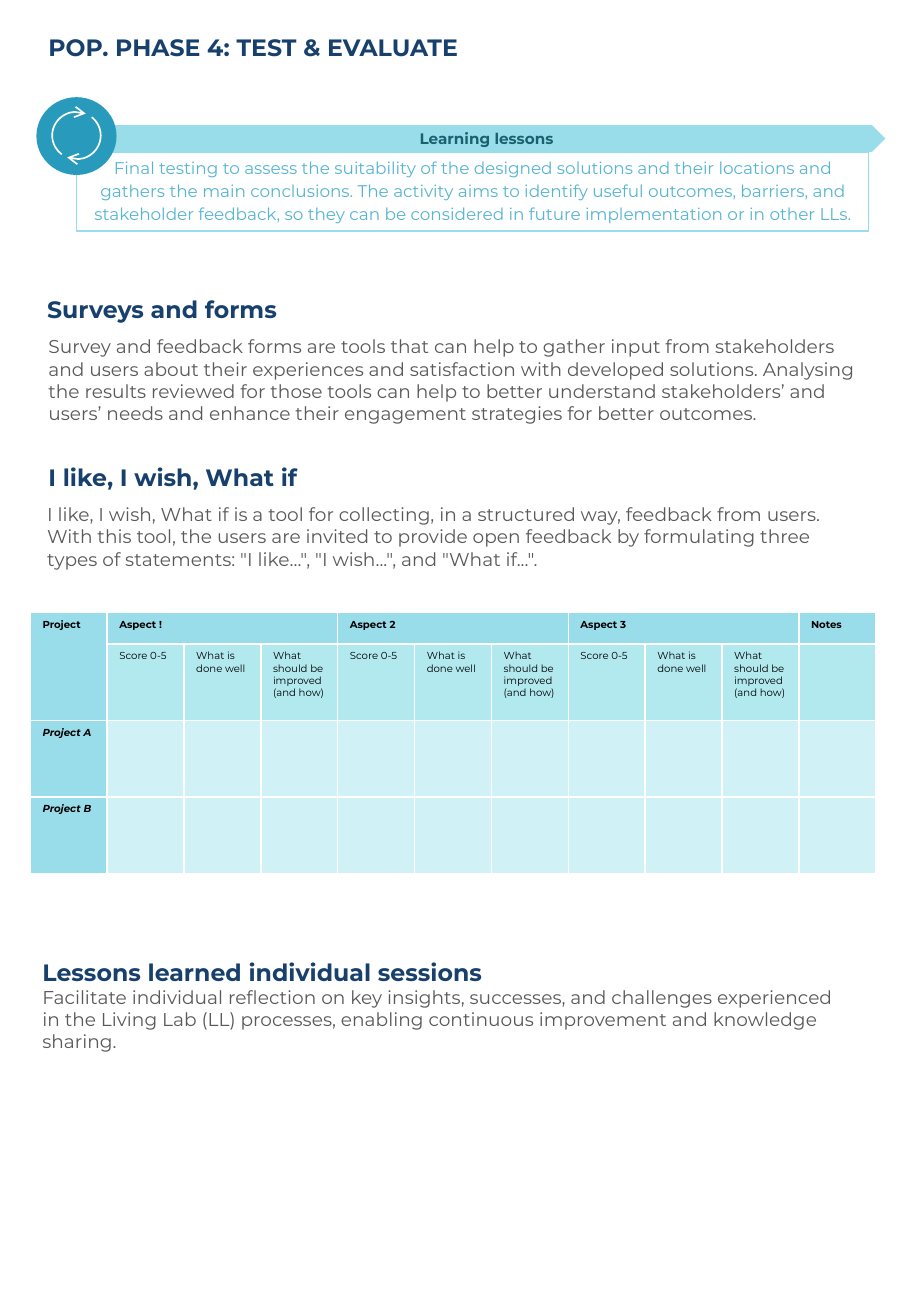
from lxml.etree import SubElement
from pptx import Presentation
from pptx.dml.color import RGBColor
from pptx.enum.shapes import MSO_SHAPE as Shape
from pptx.enum.text import MSO_ANCHOR as Anchor, MSO_AUTO_SIZE as AutoSize, PP_ALIGN as Align
from pptx.oxml.ns import qn
from pptx.util import Inches, Pt

COLOURS = {
    "navy": "17406D", "grey": "595959", "aqua": "99DDEB", "teal": "19616F",
    "sky": "56B5D1", "disc": "289BBC", "cell": "3EC8D9",
    "white": "FFFFFF", "black": "000000",
}
RGB = {name: RGBColor.from_string(code) for name, code in COLOURS.items()}
GRID = Inches(0.01)  # the page is a grid of 750 columns by 1083 rows

deck = Presentation()
deck.slide_width, deck.slide_height = 750 * GRID, 1083 * GRID
slide = deck.slides.add_slide(deck.slide_layouts[6])


def style(paragraph, size, colour, bold=False, italic=False):
    for run in paragraph.runs:
        run.font.name = "Montserrat"
        run.font.size = Pt(size)
        run.font.bold, run.font.italic = bold, italic
        run.font.color.rgb = RGB[colour]


def add_block(kind, box, fill=None, line=None):
    """Add a flat preset shape; box is left, top, width, height in grid units."""
    block = slide.shapes.add_shape(kind, *[side * GRID for side in box])
    block.shadow.inherit = False
    for part, colour in ((block.fill, fill), (block.line.fill, line)):
        if colour:
            part.solid()
            part.fore_color.rgb = RGB[colour]
        else:
            part.background()
    if line:
        block.line.width = Pt(1)
    return block


# Phase banner
banner = add_block(Shape.CHEVRON, (72, 103, 657, 22), fill="aqua")
banner.text_frame.text = "Learning lessons"
banner.text_frame.vertical_anchor = Anchor.MIDDLE
banner.text_frame.paragraphs[0].alignment = Align.CENTER
style(banner.text_frame.paragraphs[0], 9, "teal", bold=True)

summary = add_block(Shape.RECTANGLE, (63, 125, 652, 65), fill="white", line="aqua")
frame = summary.text_frame
frame.word_wrap = True
frame.vertical_anchor = Anchor.TOP
frame.margin_left = frame.margin_right = 6 * GRID
frame.margin_top, frame.margin_bottom = 2 * GRID, 3 * GRID
frame.text = (
    "Final testing to assess the suitability of the designed solutions and their locations and "
    "gathers the main conclusions. The activity aims to identify useful outcomes, barriers, and "
    "stakeholder feedback, so they can be considered in future implementation or in other LLs."
)
frame.paragraphs[0].alignment = Align.CENTER
frame.paragraphs[0].line_spacing = 1.15
style(frame.paragraphs[0], 10, "sky")

# Cycle icon: a disc with two arrows that turn clockwise
add_block(Shape.OVAL, (30, 80, 66, 64), fill="disc")
for start, end in ((128, 293), (310, 113)):
    arrow = add_block(Shape.ARC, (43, 92, 40, 39), line="white")
    arrow.adjustments[0] = start * 0.6
    arrow.adjustments[1] = end * 0.6
    SubElement(arrow.line._get_or_add_ln(), qn("a:tailEnd"), type="arrow", w="med", len="med")

# Headings and body texts
HEADING, BODY = (14, "navy", True), (11, "grey", False)
TEXTS = [
    ((30, 22, 700, 57), [("POP. PHASE 4: TEST & EVALUATE", HEADING)]),
    ((29, 238, 300, 34), [("Surveys and forms", HEADING)]),
    ((30, 271, 690, 84), [(
        "Survey and feedback forms are tools that can help to gather input from stakeholders "
        "and users about their experiences and satisfaction with developed solutions. Analysing "
        "the results reviewed for those tools can help to better understand stakeholders’ and "
        "users’ needs and enhance their engagement strategies for better outcomes.", BODY)]),
    ((30, 376, 300, 34), [("I like, I wish, What if", HEADING)]),
    ((29, 409, 687, 66), [(
        "I like, I wish, What if is a tool for collecting, in a structured way, feedback from "
        "users. With this tool, the users are invited to provide open feedback by formulating "
        'three types of statements: "I like...", "I wish...", and "What if...".', BODY)]),
    ((25, 783, 688, 108), [
        ("Lessons learned individual sessions", HEADING),
        ("Facilitate individual reflection on key insights, successes, and challenges experienced "
         "in the Living Lab (LL) processes, enabling continuous improvement and knowledge "
         "sharing.", BODY)]),
]
for box, lines in TEXTS:
    frame = slide.shapes.add_textbox(*[side * GRID for side in box]).text_frame
    frame.word_wrap = True
    frame.auto_size = AutoSize.SHAPE_TO_FIT_TEXT
    frame.text = "\n".join(words for words, look in lines)
    for paragraph, (words, look) in zip(frame.paragraphs, lines):
        style(paragraph, *look)

# Feedback table
QUESTIONS = ["Score 0-5", "What is done well", "What should be improved (and how)"]
ROWS = [
    ["Project", "Aspect !", "", "", "Aspect 2", "", "", "Aspect 3", "", "", "Notes"],
    ["", *QUESTIONS * 3, ""],
    ["Project A"] + [""] * 10,
    ["Project B"] + [""] * 10,
]
OPACITY = [100, 40, 24, 24]  # percent, by row
table = slide.shapes.add_table(
    len(ROWS), len(ROWS[0]), 25 * GRID, 504 * GRID, 696 * GRID, 215 * GRID).table
for column in table.columns:
    column.width = 696 * GRID // len(ROWS[0])
for row, height in zip(table.rows, (26, 63, 63, 63)):
    row.height = height * GRID

for r, entries in enumerate(ROWS):
    for c, entry in enumerate(entries):
        cell = table.cell(r, c)
        cell.text = entry
        header = r == 0 or c == 0
        style(cell.text_frame.paragraphs[0], 6, "black", bold=header, italic=r > 1)
        cell.fill.solid()
        cell.fill.fore_color.rgb = RGB["aqua" if header else "cell"]
        props = cell._tc.get_or_add_tcPr()
        if not header:
            tint = props.find(".//" + qn("a:srgbClr"))
            SubElement(tint, qn("a:alpha"), val=str(OPACITY[r] * 1000))
        for place, side in enumerate(("a:lnL", "a:lnR", "a:lnT", "a:lnB")):
            border = SubElement(props, qn(side), w=str(Pt(1)))
            paint = SubElement(border, qn("a:solidFill"))
            SubElement(paint, qn("a:srgbClr"), val=COLOURS["white"])
            props.insert(place, border)

table.cell(0, 0).merge(table.cell(1, 0))
for c in (1, 4, 7):
    table.cell(0, c).merge(table.cell(0, c + 2))

deck.save("out.pptx")
